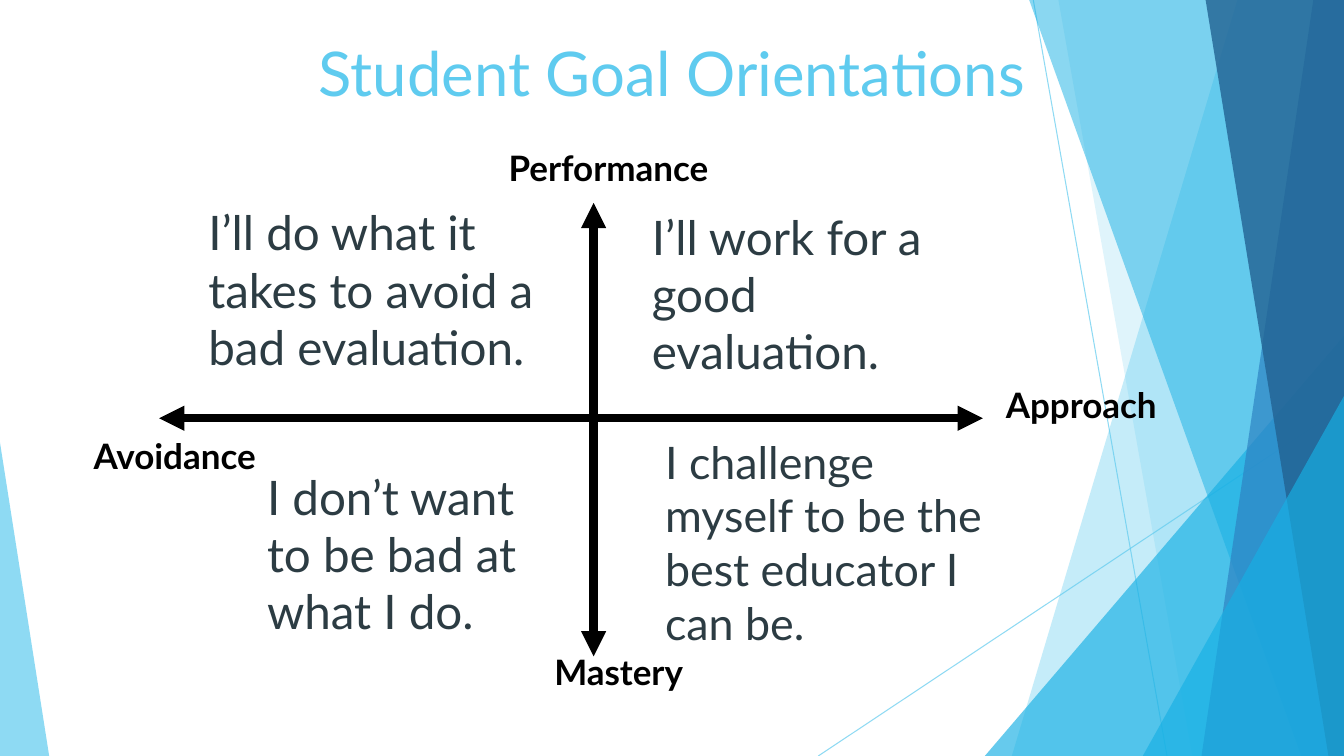
from pptx import Presentation
from pptx import util as u
from pptx.dml.color import RGBColor
from pptx.enum import shapes, text
from pptx.oxml import ns, xmlchemy

WIDTH, HEIGHT, TOP = 33.87, 19.05, -0.02
SKY = RGBColor(0x5F, 0xCB, 0xEF)
CYAN = RGBColor(0x17, 0xB0, 0xE4)
BLUE = RGBColor(0x2E, 0x83, 0xC3)
NAVY = RGBColor(0x22, 0x62, 0x92)
SLATE = RGBColor(0x2C, 0x3C, 0x43)
BLACK = RGBColor(0, 0, 0)


class GoalSlide:
    """Draws styled elements on one slide, with lengths in centimetres."""

    font = "Lato"

    def __init__(self, slide):
        self.slide = slide

    def set_opacity(self, shape, percent):
        for color in shape._element.spPr.iter(ns.qn("a:srgbClr")):
            alpha = xmlchemy.OxmlElement("a:alpha")
            alpha.set("val", str(percent * 1000))
            color.append(alpha)

    def paint(self, shape, color, opacity):
        shape.shadow.inherit = False
        shape.fill.solid()
        shape.fill.fore_color.rgb = color
        shape.line.fill.background()
        self.set_opacity(shape, opacity)

    def panel(self, top_x, bottom_x, color, opacity):
        corners = [(WIDTH, TOP), (WIDTH, HEIGHT), (bottom_x, HEIGHT)]
        builder = self.slide.shapes.build_freeform(u.Cm(top_x), u.Cm(TOP))
        builder.add_line_segments([(u.Cm(x), u.Cm(y)) for x, y in corners])
        self.paint(builder.convert_to_shape(), color, opacity)

    def triangle(self, left, top, width, apex, color, opacity):
        shape = self.slide.shapes.add_shape(
            shapes.MSO_SHAPE.ISOSCELES_TRIANGLE,
            u.Cm(left), u.Cm(top), u.Cm(width), u.Cm(HEIGHT - top))
        shape.adjustments[0] = apex
        self.paint(shape, color, opacity)

    def line(self, start, end, color, weight, opacity=100, arrows=False):
        connector = self.slide.shapes.add_connector(
            shapes.MSO_CONNECTOR.STRAIGHT, *map(u.Cm, start + end))
        connector.line.color.rgb = color
        connector.line.width = u.Pt(weight)
        properties = connector._element.spPr
        if opacity < 100:
            self.set_opacity(connector, opacity)
        if arrows:
            for tag in ("a:headEnd", "a:tailEnd"):
                arrowhead = xmlchemy.OxmlElement(tag)
                arrowhead.set("type", "triangle")
                properties.find(ns.qn("a:ln")).append(arrowhead)
        properties.append(xmlchemy.OxmlElement("a:effectLst"))

    def text(self, words, box, size=34, color=SLATE, bold=False,
             align=text.PP_ALIGN.LEFT, anchor=text.MSO_ANCHOR.TOP):
        frame = self.slide.shapes.add_textbox(*map(u.Cm, box)).text_frame
        frame.word_wrap = True
        frame.auto_size = text.MSO_AUTO_SIZE.SHAPE_TO_FIT_TEXT
        frame.vertical_anchor = anchor
        paragraph = frame.paragraphs[0]
        paragraph.alignment = align
        run = paragraph.add_run()
        run.text = words
        run.font.name = self.font
        run.font.size = u.Pt(size)
        run.font.bold = bold
        run.font.color.rgb = color


def draw_backdrop(page):
    page.line((26.04, 0), (29.41, HEIGHT), SKY, 0.75, opacity=70)
    page.line((WIDTH, 10.24), (20.62, HEIGHT), SKY, 0.75, opacity=70)
    page.panel(31.19, 25.5, SKY, 36)
    page.panel(26.67, 30.05, SKY, 20)
    page.triangle(24.82, 8.46, 9.05, 1, CYAN, 66)
    page.panel(25.93, 32.79, CYAN, 50)
    page.panel(33.1, 30.28, BLUE, 70)
    page.panel(30.38, 33.48, NAVY, 80)
    page.triangle(28.8, 9.98, 5.07, 1, CYAN, 66)
    page.triangle(0, 11.15, 1.24, 0, SKY, 70)


def draw_quadrants(page):
    page.line((14.96, 5.11), (14.96, 16.54), BLACK, 6, arrows=True)
    page.line((4.01, 10.54), (24.77, 10.54), BLACK, 6, arrows=True)
    for words, box in (
        ("Performance", (12.57, 3.58, 7.19, 2.08)),
        ("Approach", (25.1, 9.55, 4.8, 2.08)),
        ("Mastery", (13.72, 16.28, 4.45, 2.08)),
        ("Avoidance", (2.11, 10.82, 5.08, 1.32)),
    ):
        page.text(words, box, size=25, color=BLACK, bold=True)
    for words, box, size in (
        ("I’ll do what it takes to avoid a bad evaluation.", (5, 5, 9.09, 4.62), 34),
        ("I’ll work for a good evaluation.", (16.18, 5.11, 9, 5.38), 34),
        ("I don’t want to be bad at what I do.", (6.48, 11.66, 7.26, 6.15), 34),
        ("I challenge myself to be the best educator I can be.",
         (16.51, 10.82, 9.09, 5.74), 32),
    ):
        page.text(words, box, size=size)


def main():
    presentation = Presentation()
    presentation.slide_width = u.Cm(WIDTH)
    presentation.slide_height = u.Cm(HEIGHT)
    page = GoalSlide(presentation.slides.add_slide(presentation.slide_layouts[6]))
    draw_backdrop(page)
    page.text("Student Goal Orientations", (5.51, 0.74, 22.86, 2.13), size=44,
              color=SKY, align=text.PP_ALIGN.CENTER, anchor=text.MSO_ANCHOR.MIDDLE)
    draw_quadrants(page)
    presentation.save("out.pptx")


if __name__ == "__main__":
    main()
